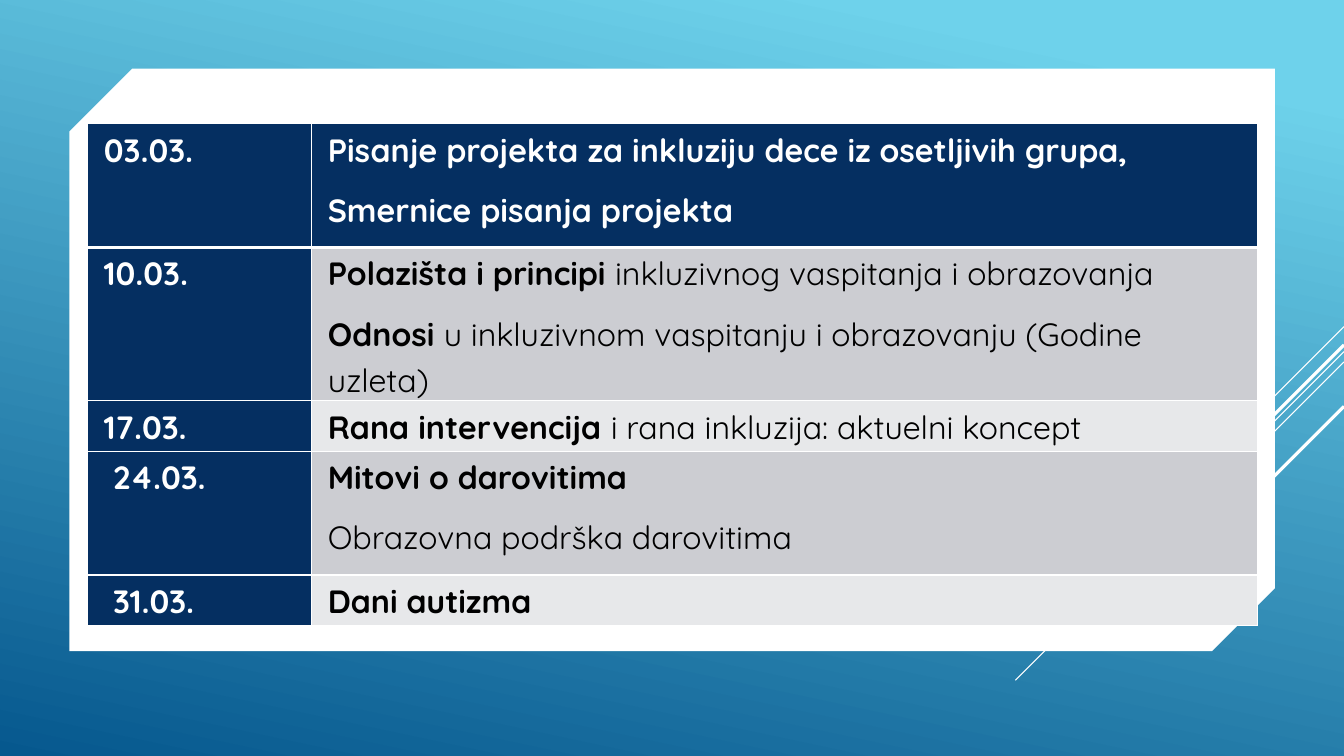
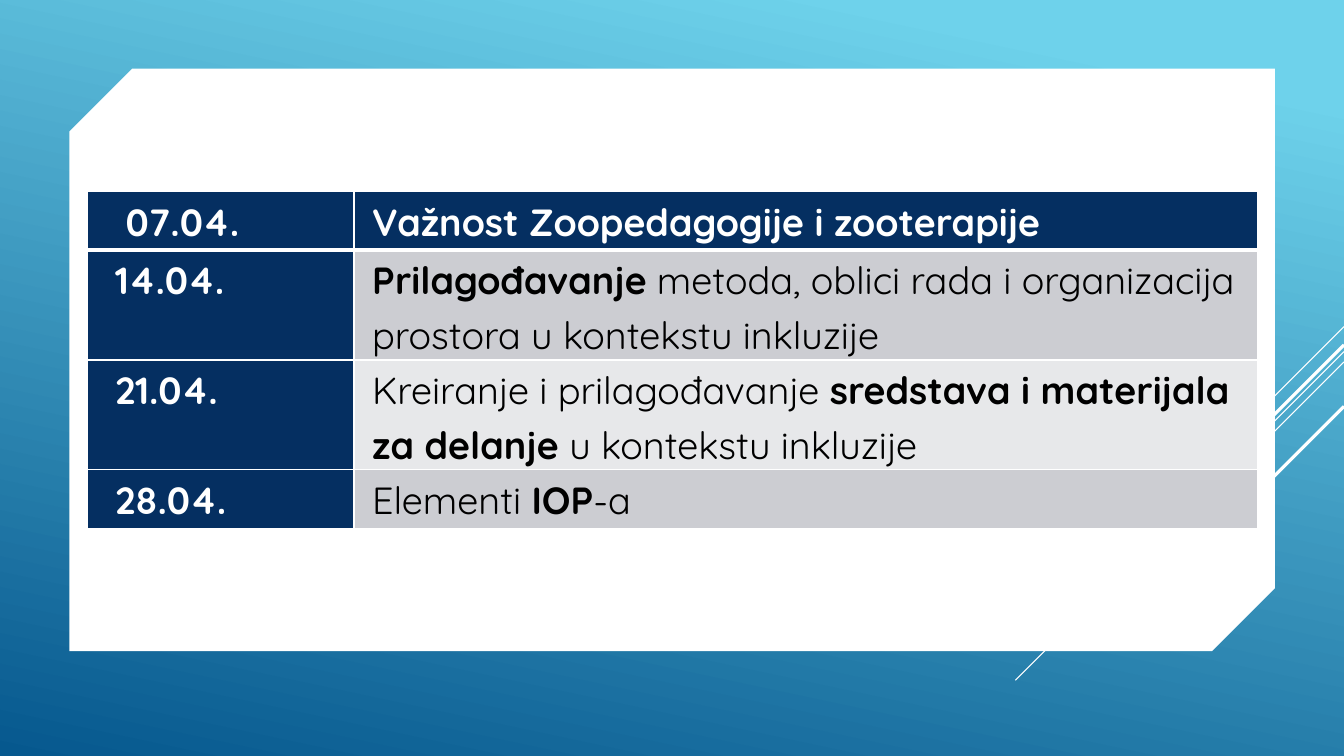
"""Build the two schedule slides."""
from pptx import Presentation
from pptx.dml.color import RGBColor as RGB
from pptx.enum.shapes import MSO_CONNECTOR as Link, MSO_SHAPE as Form
from pptx.oxml import parse_xml
from pptx.oxml.ns import nsdecls
from pptx.util import Cm, Pt

WIDTH, HEIGHT = 33.87, 19.05
FONT = "Quicksand"
HUES = {"sky": "6ED2EB", "sea": "06588E", "white": "FFFFFF", "navy": "052F61",
        "black": "000000", "dark": "CCCDD2", "light": "E7E8EA"}
RAYS = [(8.23, 2.54, 0.75), (8.86, 8.28, 0.75), (9.12, 5.26, 0.75),
        (8.69, 4.85, 2.25), (10.24, 3.53, 2.25)]
INDENT = (0.99, -0.76)

MARCH = [
    ("03.03.", ["*Pisanje projekta za inkluziju dece iz osetljivih grupa,*",
                "*Smernice pisanja projekta*"], 3.12, False),
    ("10.03.", ["*Polazišta i principi *inkluzivnog vaspitanja i obrazovanja",
                "*Odnosi *u inkluzivnom vaspitanju i obrazovanju (Godine uzleta)"], 3.12, False),
    ("17.03.", ["*Rana intervencija *i rana inkluzija: aktuelni koncept"], 1.27, False),
    ("24.03.", ["*Mitovi o darovitima*", "Obrazovna podrška darovitima"], 3.12, True),
    ("31.03.", ["*Dani autizma*"], 1.27, True),
]
APRIL = [
    (" 07.04.", ["*Važnost Zoopedagogije i zooterapije*"], 1.47, True),
    ("14.04.", ["*Prilagođavanje* metoda, oblici rada i organizacija "
                "prostora u kontekstu inkluzije"], 2.77, True),
    ("21.04.", ["Kreiranje i prilagođavanje *sredstava i materijala za delanje *"
                "u kontekstu inkluzije"], 2.77, True),
    ("28.04.", ["Elementi *IOP*-a"], 1.47, True),
]


def hue(name):
    return RGB.from_string(HUES[name])


class Deck:
    def __init__(self):
        self.prs = Presentation()
        self.prs.slide_width, self.prs.slide_height = Cm(WIDTH), Cm(HEIGHT)
        self.slide = None

    def page(self):
        self.slide = self.prs.slides.add_slide(self.prs.slide_layouts[6])
        fill = self.slide.background.fill
        fill.gradient()
        fill.gradient_angle = 258
        for stop, name, place in zip(fill.gradient_stops, ("sky", "sea"), (0.1, 1)):
            stop.color.rgb = hue(name)
            stop.position = place
        for top, run, weight in RAYS:
            self.ray(top, run, weight)
        self.panel()

    def ray(self, top, run, weight):
        line = self.slide.shapes.add_connector(
            Link.STRAIGHT, Cm(WIDTH), Cm(top), Cm(WIDTH - run), Cm(top + run))
        line.line.color.rgb = hue("white")
        line.line.width = Pt(weight)
        line._element.spPr.append(parse_xml(f"<a:effectLst {nsdecls('a')}/>"))

    def panel(self):
        box = self.slide.shapes.add_shape(
            Form.SNIP_2_DIAG_RECTANGLE, Cm(1.75), Cm(1.73), Cm(30.38), Cm(14.68))
        box.adjustments[0], box.adjustments[1] = 0.108, 0
        box.shadow.inherit = False
        box.fill.solid()
        box.fill.fore_color.rgb = hue("white")
        box.line.fill.background()

    def table(self, top, cols, rows, size, inset):
        high = sum(row[2] for row in rows)
        grid = self.slide.shapes.add_table(
            len(rows), 2, Cm(2.21), Cm(top), Cm(sum(cols)), Cm(high)).table
        grid.horz_banding = False
        for col, wide in zip(grid.columns, cols):
            col.width = Cm(wide)
        for i, (date, texts, tall, shift) in enumerate(rows):
            grid.rows[i].height = Cm(tall)
            band, ink = ("dark" if i % 2 else "light", "black") if i else ("navy", "white")
            first, last = grid.cell(i, 0), grid.cell(i, 1)
            for cell, tone in ((first, "navy"), (last, band)):
                self.frame(cell, i, tone, inset)
            self.put(first, [f"*{date}*"], size, "white", shift)
            self.put(last, texts, size, ink)

    def frame(self, cell, i, tone, inset):
        cell.margin_left = cell.margin_right = Cm(inset)
        cell.margin_top = cell.margin_bottom = 0
        props = cell._tc.get_or_add_tcPr()
        for side in "LRTB":
            thick = (i, side) in ((0, "B"), (1, "T"))
            props.append(parse_xml(
                f'<a:ln{side} {nsdecls("a")} w="{Pt(3 if thick else 1)}"><a:solidFill>'
                f'<a:srgbClr val="{HUES["white"]}"/></a:solidFill></a:ln{side}>'))
        cell.fill.solid()
        cell.fill.fore_color.rgb = hue(tone)

    def put(self, cell, texts, size, ink, shift=False):
        frame = cell.text_frame
        for n, text in enumerate(texts):
            para = frame.add_paragraph() if n else frame.paragraphs[0]
            para.line_spacing, para.space_after = 1.15, Pt(10)
            if shift:
                props = para._p.get_or_add_pPr()
                for key, gap in zip(("marL", "indent"), INDENT):
                    props.set(key, str(Cm(gap)))
            for k, part in enumerate(text.split("*")):
                if part:
                    run = para.add_run()
                    run.text = part
                    font = run.font
                    font.name, font.size, font.bold = FONT, Pt(size), k % 2 == 1
                    font.color.rgb = hue(ink)


def main():
    deck = Deck()
    deck.page()
    deck.table(3.12, (5.64, 23.83), MARCH, 23, 0.41)
    deck.page()
    deck.table(4.83, (6.71, 22.76), APRIL, 27, 0.46)
    deck.prs.save("out.pptx")


if __name__ == "__main__":
    main()
